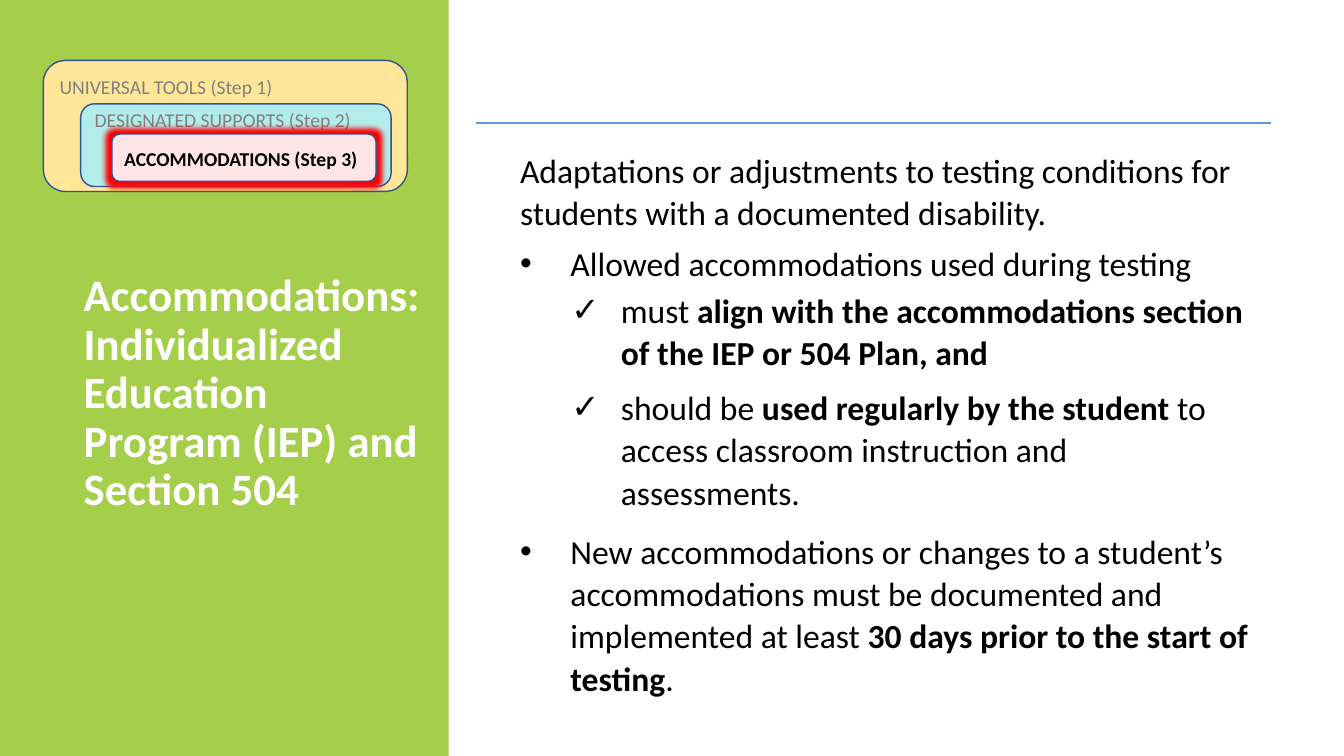
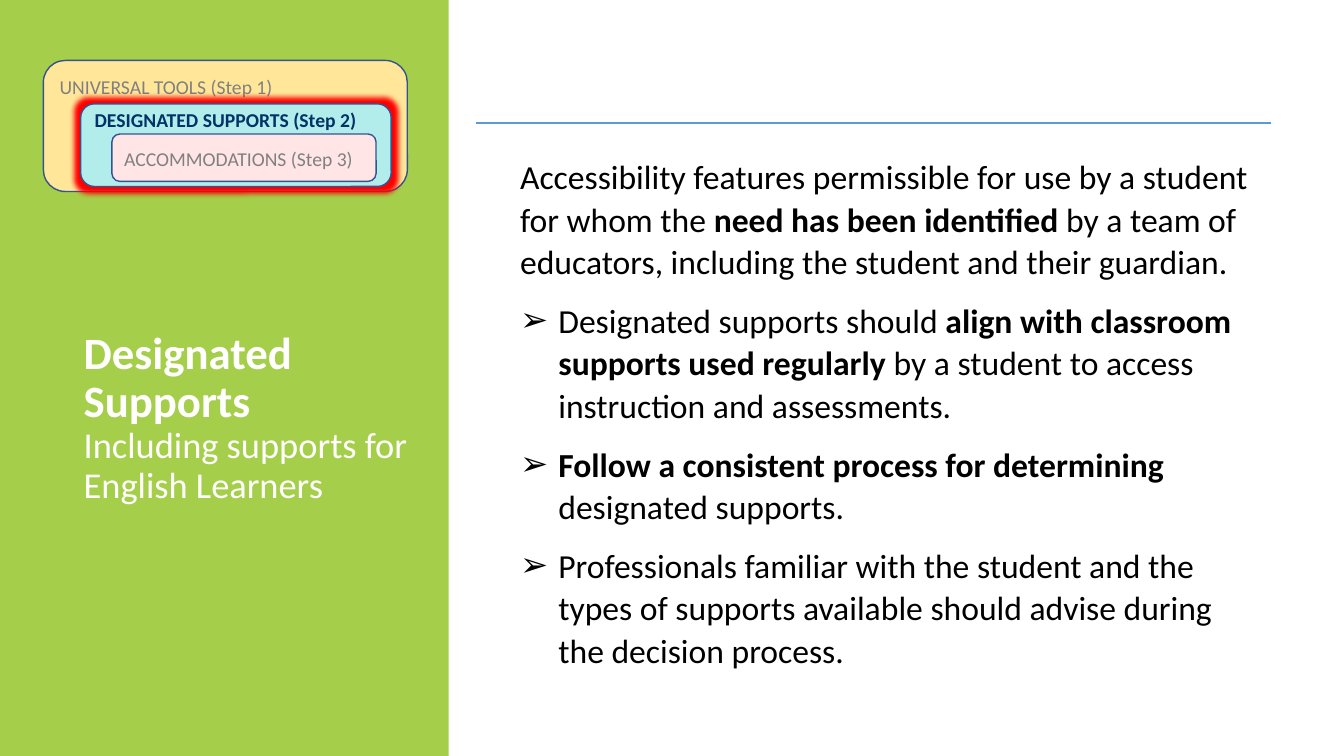
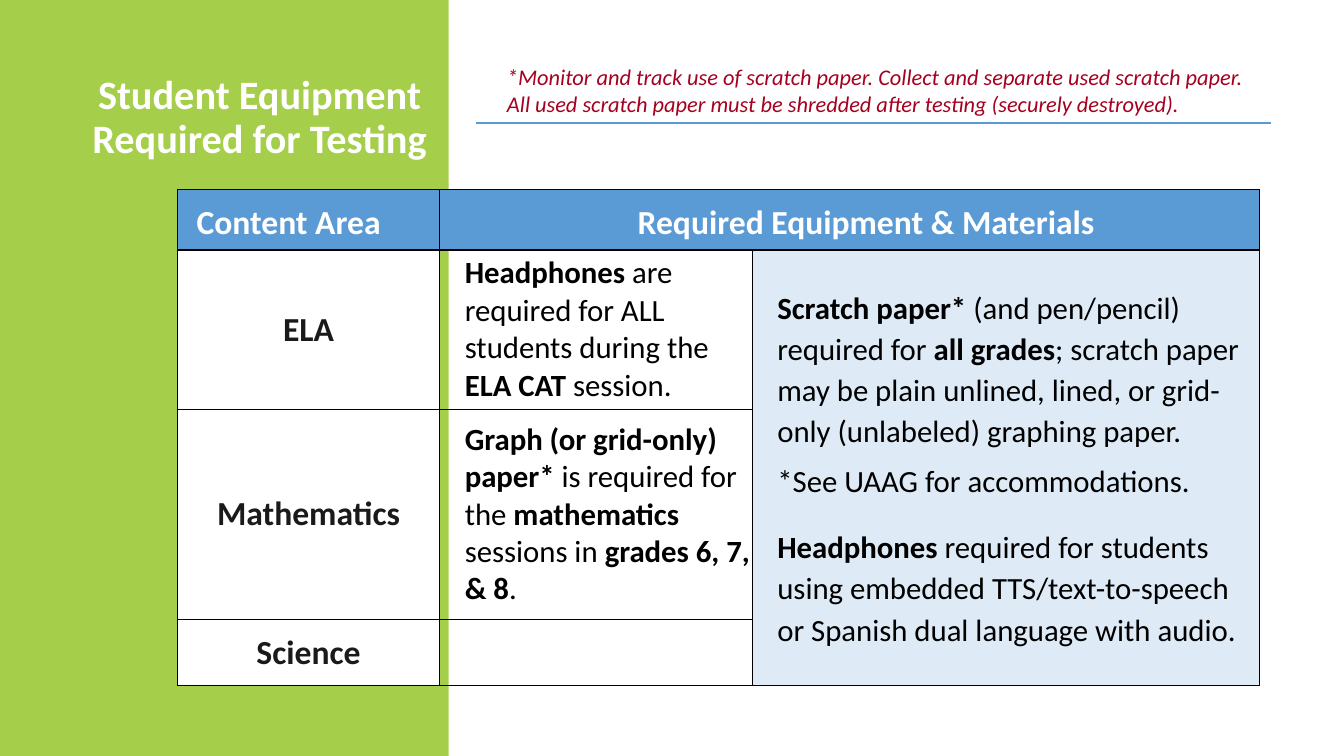
from lxml import etree
from pptx import Presentation
from pptx import util as u
from pptx.dml.color import RGBColor
from pptx.enum import shapes, text
from pptx.oxml import ns

GREEN = RGBColor(0xA5, 0xCE, 0x4A)
BLUE = RGBColor(0x5B, 0x9B, 0xD5)
PALE = RGBColor(0xDE, 0xEB, 0xF7)
WHITE = RGBColor(0xFF, 0xFF, 0xFF)
BLACK = RGBColor(0, 0, 0)
INK = RGBColor(0x1A, 0x1A, 0x1A)
GRAY = RGBColor(0x80, 0x80, 0x80)
NAVY = RGBColor(0x00, 0x33, 0x66)
EDGE = RGBColor(0x32, 0x54, 0x91)
WINE = RGBColor(0xA5, 0x00, 0x21)
RED = RGBColor(0xFF, 0, 0)
CREAM = RGBColor(0xFF, 0xE6, 0x99)
AQUA = RGBColor(0xB2, 0xED, 0xEC)
PINK = RGBColor(0xFF, 0xE5, 0xE5)
FACE = "Calibri"
LEFT, MID = text.PP_ALIGN.LEFT, text.PP_ALIGN.CENTER

# Text between bars is bold.
STEPS = [
    ("UNIVERSAL TOOLS (Step 1)", (0.43, 0.6, 3.61, 1.3), CREAM, 0.08, BLACK),
    ("DESIGNATED SUPPORTS (Step 2)", (0.8, 1.03, 3.08, 0.82), AQUA, 0, NAVY),
    ("ACCOMMODATIONS (Step 3)", (1.11, 1.33, 2.62, 0.47), PINK, 0.1, BLACK),
]
DOT = dict(left=0.5, hang=0.5, mark="•")
TICK = dict(left=1, hang=0.49, mark="✓")
ARROW = dict(left=0.38, hang=0.38, mark="➢", after=12)
TOPICS = [
    dict(
        step=2,
        spot=(0.73, 1.2, 3.69, 5.42),
        title=[("Accommodations:", 32, True),
               ("Individualized Education Program (IEP) and Section 504", 32, True)],
        area=(5.06, 1.42, 7.47, 5.64),
        body=[
            ("Adaptations or adjustments to testing conditions for students with a "
             "documented disability.", dict(after=6)),
            ("Allowed accommodations used during testing", dict(DOT, after=3)),
            ("must |align with the accommodations section of the IEP or 504 Plan, and|",
             dict(TICK, after=3)),
            ("should be |used regularly by the student |to access classroom instruction "
             "and assessments.", dict(TICK, before=6, after=6)),
            ("New accommodations or changes to a student’s accommodations must be "
             "documented and implemented at least |30 days prior to the start of "
             "testing|.", dict(DOT, before=6)),
        ],
    ),
    dict(
        step=1,
        spot=(0.73, 1.44, 3.69, 5.42),
        title=[("Designated Supports", 32, True),
               ("Including supports for English Learners", 26, False)],
        area=(5.06, 1.48, 7.55, 5.42),
        body=[
            ("Accessibility features permissible for use by a student for whom the "
             "|need has been identified |by a team of educators, including the student "
             "and their guardian.", dict(after=12)),
            ("Designated supports should |align with classroom supports used regularly| "
             "by a student to access instruction and assessments.", ARROW),
            ("|Follow a consistent process for determining |designated supports.", ARROW),
            ("Professionals familiar with the student and the types of supports "
             "available should advise during the decision process.", ARROW),
        ],
    ),
]
GEAR = [("Student Equipment Required for Testing", 28.8, True)]
NOTE = ("*Monitor and track use of scratch paper. Collect and separate used scratch "
        "paper. All used scratch paper must be shredded after testing (securely "
        "destroyed).")
COLS = [2.6, 3.1, 5.03]
ROWS = [0.6, 1.58, 2.09, 0.65]
HEAD = dict(size=24, color=WHITE, bold=True, lead=1.15)
AREA = dict(size=24, color=INK, bold=True, align=MID)
CELL = dict(size=22, left=0.25)
WIDE = dict(CELL, lead=1.1)
CELLS = {
    (0, 0): (BLUE, [("Content Area", dict(HEAD, left=0.13))]),
    (0, 1): (BLUE, [("Required Equipment & Materials", dict(HEAD, align=MID, left=0.33))]),
    (1, 0): (WHITE, [("ELA", AREA)]),
    (2, 0): (WHITE, [("Mathematics", AREA)]),
    (3, 0): (WHITE, [("Science", AREA)]),
    (1, 1): (None, [("|Headphones| are required for ALL students during the |ELA CAT "
                     "|session.", CELL)]),
    (2, 1): (None, [("|Graph (or grid-only) paper*| is required for the |mathematics "
                     "|sessions in |grades 6, 7, & 8|.", CELL)]),
    (1, 2): (PALE, [
        ("|Scratch paper*| (and pen/pencil) required for |all grades|; scratch paper may "
         "be plain unlined, lined, or grid-only (unlabeled) graphing paper.", WIDE),
        ("*See UAAG for accommodations.", dict(WIDE, before=6)),
        ("|Headphones| required for students using embedded TTS/text-to-speech or "
         "Spanish dual language with audio.", dict(WIDE, before=18)),
    ]),
}
SPANS = [((0, 1), (0, 2)), ((1, 2), (3, 2))]


def box(dims):
    return [u.Inches(d) for d in dims]


def sub(node, tag, **attrs):
    return etree.SubElement(node, ns.qn(tag), attrs)


def tint(node, color):
    sub(node, "a:srgbClr", val=str(color))


def put(par, words, size=24, color=BLACK, bold=False, italic=False, align=LEFT,
        lead=1.0, before=0, after=0, left=0, hang=0, mark=None):
    for i, part in enumerate(words.split("|")):
        if part:
            run = par.add_run()
            run.text = part
            if i % 2:
                run.font.bold = True
    prop = par._p.get_or_add_pPr()
    prop.set("marL", str(u.Inches(left)))
    prop.set("indent", str(-u.Inches(hang)))
    if mark:
        sub(prop, "a:buFont", typeface="Arial")
        sub(prop, "a:buChar", char=mark)
    par.alignment, par.line_spacing = align, lead
    par.space_before, par.space_after = u.Pt(before), u.Pt(after)
    font = par.font
    font.name, font.size, font.bold, font.italic = FACE, u.Pt(size), bold, italic
    font.color.rgb = color


def write(frame, items, **base):
    for i, (words, look) in enumerate(items):
        par = frame.add_paragraph() if i else frame.paragraphs[0]
        put(par, words, **{**base, **look})


def frame_up(layout, slide):
    band = slide.shapes.add_shape(shapes.MSO_SHAPE.RECTANGLE, *box((0, 0, 4.45, 7.5)))
    band.shadow.inherit = False
    band.fill.solid()
    band.fill.fore_color.rgb = GREEN
    band.line.fill.background()
    rule = slide.shapes.add_connector(shapes.MSO_CONNECTOR.STRAIGHT,
                                      *box((12.61, 1.22, 4.72, 1.22)))
    rule.line.color.rgb, rule.line.width = BLUE, u.Pt(1.25)
    sub(rule.element.spPr, "a:effectLst")
    for item in (rule, band):
        layout.shapes.element.insert(2, item.element)


def add_title(slide, lines, spot, align=LEFT):
    title = slide.shapes.title
    title.left, title.top, title.width, title.height = box(spot)
    frame = title.text_frame
    frame.auto_size = text.MSO_AUTO_SIZE.NONE
    frame.vertical_anchor = text.MSO_ANCHOR.MIDDLE
    items = [(words, dict(size=size, bold=bold)) for words, size, bold in lines]
    write(frame, items, color=WHITE, align=align, lead=0.9)


def add_text(slide, items, area, **base):
    frame = slide.shapes.add_textbox(*box(area)).text_frame
    frame.word_wrap = True
    write(frame, items, **base)


def add_steps(slide, step):
    group = slide.shapes.add_group_shape()
    for i, (words, area, fill, top, color) in enumerate(STEPS):
        live = i == step
        card = group.shapes.add_shape(shapes.MSO_SHAPE.ROUNDED_RECTANGLE, *box(area))
        card.shadow.inherit = False
        card.fill.solid()
        card.fill.fore_color.rgb = fill
        card.line.color.rgb, card.line.width = EDGE, u.Pt(1)
        if live:
            glow = sub(card.element.spPr.find(ns.qn("a:effectLst")), "a:glow",
                       rad=str(u.Pt(8)))
            tint(glow, RED)
        frame = card.text_frame
        frame.word_wrap = True
        frame.vertical_anchor = text.MSO_ANCHOR.TOP
        frame.margin_top, frame.margin_bottom = u.Inches(top), 0
        put(frame.paragraphs[0], words, size=14, color=color if live else GRAY, bold=live)


def add_grid(slide):
    item = slide.shapes.add_table(len(ROWS), len(COLS),
                                  *box((1.76, 1.88, sum(COLS), sum(ROWS))))
    grid = item.table
    grid.first_row = grid.horz_banding = False
    for style in item.element.iter(ns.qn("a:tableStyleId")):
        style.text = "{2D5ABB26-0587-4C30-8999-92F81FD0307C}"
    for col, width in zip(grid.columns, COLS):
        col.width = u.Inches(width)
    for row, height in zip(grid.rows, ROWS):
        row.height = u.Inches(height)
    for start, end in SPANS:
        grid.cell(*start).merge(grid.cell(*end))
    for r in range(len(ROWS)):
        for c in range(len(COLS)):
            cell = grid.cell(r, c)
            side = 0 if c else u.Inches(0.06)
            cell.margin_left = cell.margin_right = side
            cell.margin_top = cell.margin_bottom = 0
            cell.vertical_anchor = text.MSO_ANCHOR.MIDDLE
            prop = cell._tc.get_or_add_tcPr()
            for edge in ("a:lnL", "a:lnR", "a:lnT", "a:lnB"):
                tint(sub(sub(prop, edge, w=str(u.Pt(1))), "a:solidFill"), BLACK)
            fill, items = CELLS.get((r, c), (None, []))
            if fill is not None:
                cell.fill.solid()
                cell.fill.fore_color.rgb = fill
            write(cell.text_frame, items)


def main():
    deck = Presentation()
    deck.slide_width, deck.slide_height = u.Inches(13.33), u.Inches(7.5)
    layout = deck.slide_layouts[5]
    for i, topic in enumerate(TOPICS):
        slide = deck.slides.add_slide(layout)
        if i == 0:
            frame_up(layout, slide)
        add_title(slide, topic["title"], topic["spot"])
        add_text(slide, topic["body"], topic["area"], lead=1.05)
        add_steps(slide, topic["step"])
    slide = deck.slides.add_slide(layout)
    add_title(slide, GEAR, (0.73, 0.48, 3.69, 1.39), MID)
    add_grid(slide)
    add_text(slide, [(NOTE, dict(size=16, color=WINE, italic=True))],
             (4.93, 0.58, 7.68, 0.64))
    deck.save("out.pptx")


if __name__ == "__main__":
    main()
